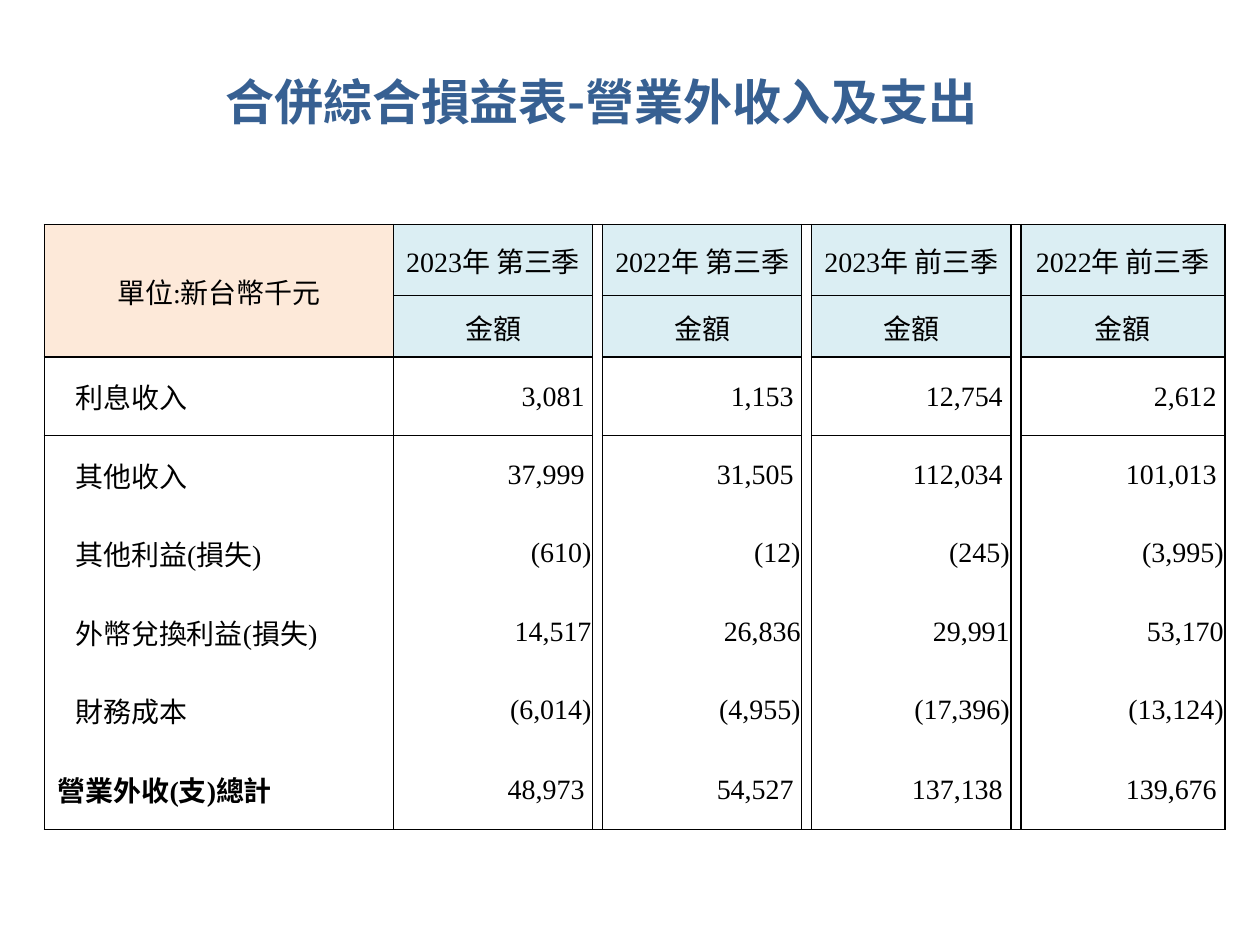
import pptx
import pptx.dml.color
import pptx.enum.text
import pptx.oxml
import pptx.oxml.ns
import pptx.util

Pt = pptx.util.Pt
ALIGN = pptx.enum.text.PP_ALIGN
qn = pptx.oxml.ns.qn

COLORS = {
    "title": "376092",
    "text": "000000",
    "border": "000000",
    "unit": "FDE9D9",
    "header": "DBEEF3",
}
CJK_FONT = "Noto Sans CJK SC"
TITLE_FONT = {"name": CJK_FONT, "size": Pt(28), "bold": True}
CELL_FONT = {"name": "Times New Roman", "size": Pt(16), "bold": False}
TOTAL_FONT = {**CELL_FONT, "bold": True}
CELL_BOX = {
    "margin_left": Pt(0.7),
    "margin_top": Pt(0.7),
    "margin_right": Pt(0.7),
    "margin_bottom": 0,
    "vertical_anchor": pptx.enum.text.MSO_ANCHOR.MIDDLE,
}
PLAIN_TABLE = "{2D5ABB26-0587-4C30-8999-92F81FD0307C}"

UNIT = "單位:新台幣千元"
PERIODS = ["2023年 第三季", "2022年 第三季", "2023年 前三季", "2022年 前三季"]
ITEMS = [
    ("利息收入", ["3,081 ", "1,153 ", "12,754 ", "2,612 "]),
    ("其他收入", ["37,999 ", "31,505 ", "112,034 ", "101,013 "]),
    ("其他利益(損失)", ["(610)", "(12)", "(245)", "(3,995)"]),
    ("外幣兌換利益(損失)", ["14,517", "26,836", "29,991", "53,170"]),
    ("財務成本", ["(6,014)", "(4,955)", "(17,396)", "(13,124)"]),
    ("營業外收(支)總計", ["48,973 ", "54,527 ", "137,138 ", "139,676 "]),
]
HEADER_ROWS = 2
LAST_ROW = HEADER_ROWS + len(ITEMS) - 1
COL_WIDTHS = [199.5, 113.8, 5.7, 113.8, 5.7, 113.8, 5.7, 116.6]
ROW_HEIGHTS = [40.7, 35] + [44.8] * 5 + [46]


def apply(target, values):
    for name, value in values.items():
        setattr(target, name, value)


def rgb(name):
    return pptx.dml.color.RGBColor.from_string(COLORS[name])


def border_sides(row, col):
    """Verticals run all the way down; amount columns also box in the header."""
    is_gap = col > 0 and col % 2 == 0
    sides = "LR"
    if row == 0 or (row <= HEADER_ROWS and not is_gap):
        sides += "T"
    if row == LAST_ROW or (row < HEADER_ROWS and not is_gap):
        sides += "B"
    return sides


class Deck:
    def __init__(self, width, height):
        self.prs = pptx.Presentation()
        apply(self.prs, {"slide_width": Pt(width), "slide_height": Pt(height)})
        self.s = self.prs.slides.add_slide(self.prs.slide_layouts[6])

    def put_text(self, tf, text, font, color, align=ALIGN.LEFT, indent=0):
        p = tf.paragraphs[0]
        p.alignment = align
        if indent:
            p._p.get_or_add_pPr().set("marL", str(Pt(indent)))
        r = p.add_run()
        r.text = text
        apply(r.font, font)
        r.font.color.rgb = rgb(color)
        ea = pptx.oxml.parse_xml(
            f'<a:ea {pptx.oxml.ns.nsdecls("a")} typeface="{CJK_FONT}"/>')
        r._r.rPr.find(qn("a:latin")).addnext(ea)

    def text(self, x, y, w, h, text, font, color):
        tf = self.s.shapes.add_textbox(Pt(x), Pt(y), Pt(w), Pt(h)).text_frame
        tf.word_wrap = True
        self.put_text(tf, text, font, color)

    def table(self, x, y, widths, heights):
        frame = self.s.shapes.add_table(
            len(heights), len(widths), Pt(x), Pt(y),
            Pt(sum(widths)), Pt(sum(heights)))
        table = frame.table
        apply(table, {"first_row": False, "horz_banding": False})
        table._tbl.tblPr.find(qn("a:tableStyleId")).text = PLAIN_TABLE
        for column, width in zip(table.columns, widths):
            column.width = Pt(width)
        for row, height in zip(table.rows, heights):
            row.height = Pt(height)
        for r in range(len(heights)):
            for c in range(len(widths)):
                cell = table.cell(r, c)
                apply(cell, CELL_BOX)
                self.borders(cell, border_sides(r, c))
                cell.fill.background()
        return table

    def borders(self, cell, sides):
        tc_pr = cell._tc.get_or_add_tcPr()
        for side in sides:
            tc_pr.append(pptx.oxml.parse_xml(
                f'<a:ln{side} {pptx.oxml.ns.nsdecls("a")} w="{Pt(1)}">'
                f'<a:solidFill><a:srgbClr val="{COLORS["border"]}"/></a:solidFill>'
                f'</a:ln{side}>'))

    def cell(self, cell, text, align, fill=None, font=CELL_FONT, indent=0):
        self.put_text(cell.text_frame, text, font, "text", align, indent)
        if fill:
            cell.fill.solid()
            cell.fill.fore_color.rgb = rgb(fill)


def main():
    deck = Deck(720, 540)
    deck.text(121.7, 37.4, 584, 41, "合併綜合損益表-營業外收入及支出",
              TITLE_FONT, "title")

    table = deck.table(25.4, 128.3, COL_WIDTHS, ROW_HEIGHTS)
    table.cell(0, 0).merge(table.cell(1, 0))
    deck.cell(table.cell(0, 0), UNIT, ALIGN.CENTER, "unit")
    for i, period in enumerate(PERIODS):
        for row, label in enumerate([period, "金額"]):
            deck.cell(table.cell(row, 2 * i + 1), label, ALIGN.CENTER, "header")

    for row, (item, amounts) in enumerate(ITEMS, HEADER_ROWS):
        is_total = row == LAST_ROW
        deck.cell(table.cell(row, 0), item, ALIGN.LEFT,
                  font=TOTAL_FONT if is_total else CELL_FONT,
                  indent=7 if is_total else 17)
        for i, amount in enumerate(amounts):
            deck.cell(table.cell(row, 2 * i + 1), amount, ALIGN.RIGHT)

    deck.prs.save("out.pptx")


if __name__ == "__main__":
    main()
